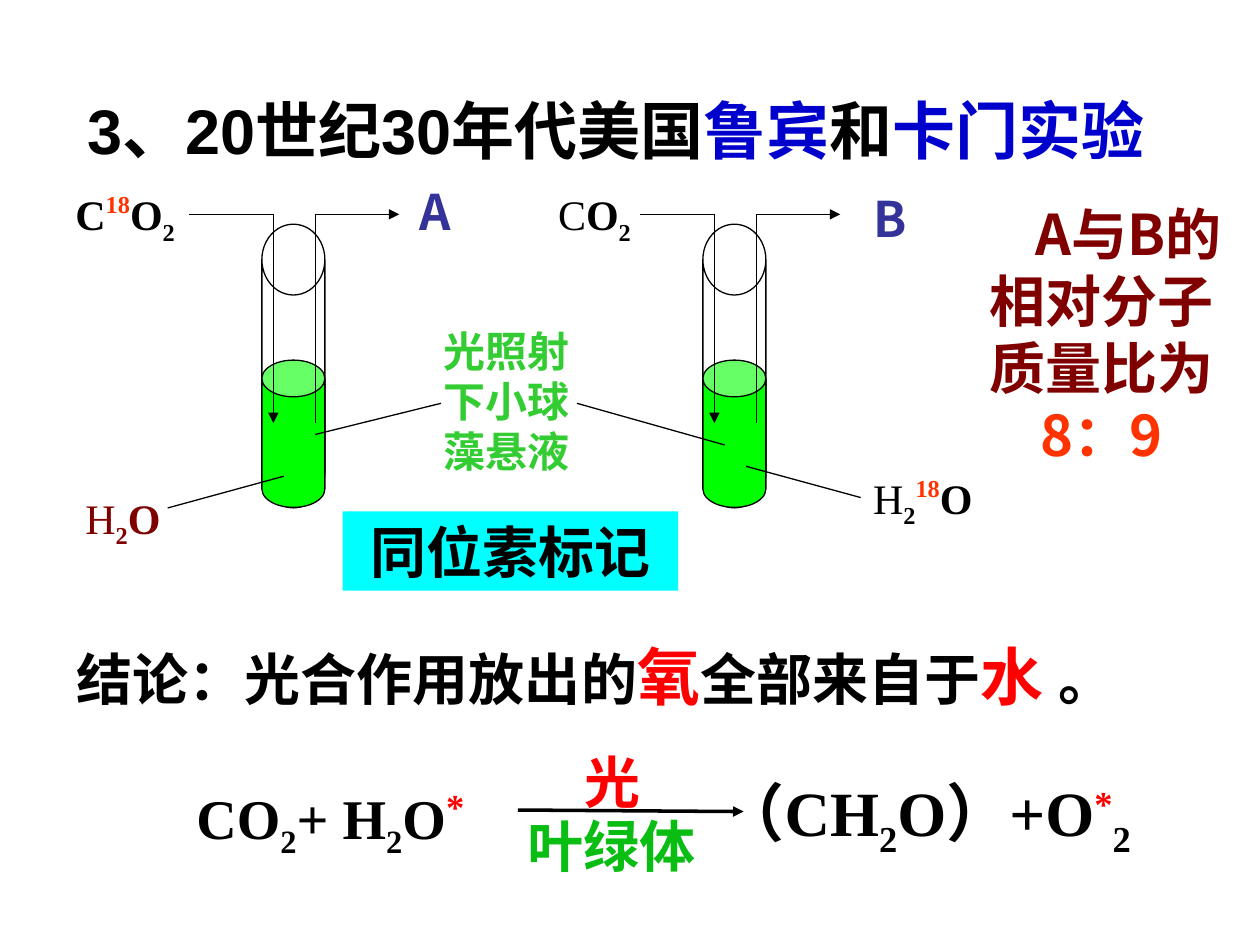
from lxml.etree import SubElement
from pptx import Presentation
from pptx.dml.color import RGBColor
from pptx.enum.shapes import MSO_CONNECTOR, MSO_SHAPE
from pptx.enum.text import MSO_ANCHOR, MSO_AUTO_SIZE, PP_ALIGN
from pptx.oxml.ns import qn
from pptx.util import Cm, Pt

CJK_FONT = "Noto Sans CJK SC"
BLACK, RED, ORANGE, MAROON = "000000", "FF0000", "FF3300", "800000"
SUBSCRIPT = {"bold": True, "baseline": -25}
ISOTOPE = {"bold": True, "baseline": 40, "color": ORANGE}
STAR = {"size": 36, "baseline": 30, "color": RED}

LABEL = {"name": "Times New Roman", "size": 24, "bold": False, "color": BLACK}
BOLD_LABEL = {**LABEL, "bold": True}
GAS = {"name": CJK_FONT, "size": 28, "bold": True, "color": "333399"}
RATIO = {"name": CJK_FONT, "size": 32, "bold": True, "color": MAROON}
CONCLUSION = {"name": "DejaVu Sans", "size": 32, "bold": True, "color": BLACK}
EQUATION = {**BOLD_LABEL, "size": 32}
HEADING = {"name": "Arial", "size": 36, "bold": True, "color": BLACK}


def rgb(color):
    return RGBColor.from_string(color)


def add_run(paragraph, text, style):
    run = paragraph.add_run()
    run.text = text
    values = {"name": style["name"], "size": Pt(style["size"]), "bold": style["bold"]}
    for attribute, value in values.items():
        setattr(run.font, attribute, value)
    run.font.color.rgb = rgb(style["color"])
    properties = run._r.get_or_add_rPr()
    SubElement(properties, qn("a:ea")).set("typeface", CJK_FONT)
    if "baseline" in style:
        properties.set("baseline", str(style["baseline"] * 1000))


def write(shape, runs, style, align=PP_ALIGN.LEFT, anchor=MSO_ANCHOR.TOP, wrap=True):
    """Fill a shape with runs: plain strings, or (string, style changes) pairs."""
    frame = shape.text_frame
    settings = {"auto_size": MSO_AUTO_SIZE.NONE, "word_wrap": wrap, "vertical_anchor": anchor}
    for attribute, value in settings.items():
        setattr(frame, attribute, value)
    paragraph = frame.paragraphs[0]
    paragraph.alignment = align
    for item in runs:
        text, changes = (item, {}) if isinstance(item, str) else item
        add_run(paragraph, text, {**style, **changes})
    return paragraph


def add_text(slide, box, runs, style, **layout):
    shape = slide.shapes.add_textbox(*map(Cm, box))
    return write(shape, runs, style, **layout)


def add_filled(slide, preset, box, fill, line=None):
    shape = slide.shapes.add_shape(preset, *map(Cm, box))
    shape.shadow.inherit = False
    shape.fill.solid()
    shape.fill.fore_color.rgb = rgb(fill)
    if line:
        shape.line.color.rgb = rgb(line)
        shape.line.width = Pt(0.75)
    else:
        shape.line.fill.background()
    return shape


def add_line(slide, start, end, width=0.75, arrow=False):
    connector = slide.shapes.add_connector(MSO_CONNECTOR.STRAIGHT, *map(Cm, start + end))
    connector.line.color.rgb = rgb(BLACK)
    connector.line.width = Pt(width)
    if arrow:
        SubElement(connector.line._get_or_add_ln(), qn("a:tailEnd")).set("type", "triangle")
    SubElement(connector._element.spPr, qn("a:effectLst"))


def add_test_tube(slide, left, inlet_start):
    """Draw a tube with its liquid, the inlet pipe and the outlet pipe."""
    for top, height, rim, fill in ((4.52, 5.72, 1.125, "FFFFFF"), (7.26, 2.97, 0.583, "00FF00")):
        can = add_filled(slide, MSO_SHAPE.CAN, (left, top, 1.27, height), fill, BLACK)
        can.adjustments[0] = rim
    pipe_top, pipe_bottom = 4.32, 8.53
    inlet, outlet = left + 0.23, left + 1.07
    add_line(slide, (inlet_start, pipe_top), (inlet, pipe_top))
    add_line(slide, (inlet, pipe_top), (inlet, pipe_bottom), arrow=True)
    add_line(slide, (outlet, pipe_bottom), (outlet, pipe_top), width=0.5)
    add_line(slide, (outlet, pipe_top), (outlet + 1.7, pipe_top), arrow=True)


def add_title(slide):
    title = slide.shapes.title
    title.left, title.top, title.width, title.height = map(Cm, (1.5, 1.32, 23.9, 2.18))
    blue = {"color": "0000CC"}
    runs = ["3、20世纪30年代美国", ("鲁宾", blue), "和", ("卡门实验", blue)]
    write(title, runs, HEADING, anchor=MSO_ANCHOR.BOTTOM)


def add_experiment(slide):
    add_test_tube(slide, 5.28, 3.81)
    add_test_tube(slide, 14.17, 12.9)
    pointers = (
        ((6.35, 8.76), (8.89, 8.13)),
        ((11.63, 8.13), (14.61, 8.97)),
        ((5.72, 9.6), (3.38, 10.24)),
        ((15.04, 9.4), (17.35, 10.03)),
    )
    for start, end in pointers:
        add_line(slide, start, end)

    strong, two = {"bold": True}, ("2", SUBSCRIPT)
    formulas = (
        ((1.27, 3.68, 2.62, 1.27), ["C", ("18", ISOTOPE), "O", two], BOLD_LABEL),
        ((11, 3.68, 2.01, 1.27), ["C", ("O", strong), two], LABEL),
        ((1.47, 9.8, 2.06, 1.27), ["H", two, ("O", strong)], {**LABEL, "color": MAROON}),
        ((17.35, 9.4, 2.62, 1.27), ["H", two, ("18", ISOTOPE), ("O", strong)], LABEL),
    )
    for box, runs, style in formulas:
        add_text(slide, box, runs, style, wrap=False)
    add_text(slide, (8.2, 3.53, 1.09, 1.45), ["A"], GAS)
    add_text(slide, (17.35, 3.68, 1.09, 1.45), ["B"], GAS)
    add_text(slide, (8.69, 6.43, 3.23, 3.3), ["光照射下小球藻悬液"],
             {**BOLD_LABEL, "color": "33CC33"})


def add_findings(slide):
    ratio = add_text(slide, (19.48, 3.89, 5.44, 5.66),
                     ["A与B的相对分子质量比为", ("8：9", {"color": ORANGE})],
                     RATIO, align=PP_ALIGN.CENTER)
    ratio._p.get_or_add_pPr().set("indent", str(Cm(1.1)))
    key = {"size": 36, "color": RED}
    add_text(slide, (1.3, 12.73, 23.19, 1.78),
             ["结论：光合作用放出的", ("氧", key), "全部来自于", ("水 ", key), "。"], CONCLUSION)
    method = add_filled(slide, MSO_SHAPE.RECTANGLE, (6.91, 10.31, 6.76, 1.6), "00FFFF")
    write(method, ["同位素标记"], {**HEADING, "size": 32}, align=PP_ALIGN.CENTER)


def add_equation(slide):
    two, star = ("2", SUBSCRIPT), ("*", STAR)
    justify = PP_ALIGN.JUSTIFY
    reactants = add_filled(slide, MSO_SHAPE.RECTANGLE, (3.71, 15.52, 7.39, 1.57), "FFFFFF")
    write(reactants, ["CO", two, "+ H", two, "O", star], EQUATION, align=justify)
    add_text(slide, (11.53, 14.94, 2.26, 1.42), ["光"], {**EQUATION, "color": RED}, align=justify)
    add_text(slide, (10.39, 16.23, 5.44, 1.42), ["叶绿体"],
             {**EQUATION, "color": "09BD12"}, align=justify)
    add_line(slide, (10.44, 16.33), (14.99, 16.36), width=2, arrow=True)
    add_text(slide, (14.3, 15.47, 9.22, 1.63), ["（CH", two, "O）+O", star, two],
             {**EQUATION, "size": 36}, align=justify)


def main():
    presentation = Presentation()
    presentation.slide_width, presentation.slide_height = Cm(25.4), Cm(19.05)
    slide = presentation.slides.add_slide(presentation.slide_layouts[5])
    add_title(slide)
    add_experiment(slide)
    add_findings(slide)
    add_equation(slide)
    presentation.save("out.pptx")


if __name__ == "__main__":
    main()
